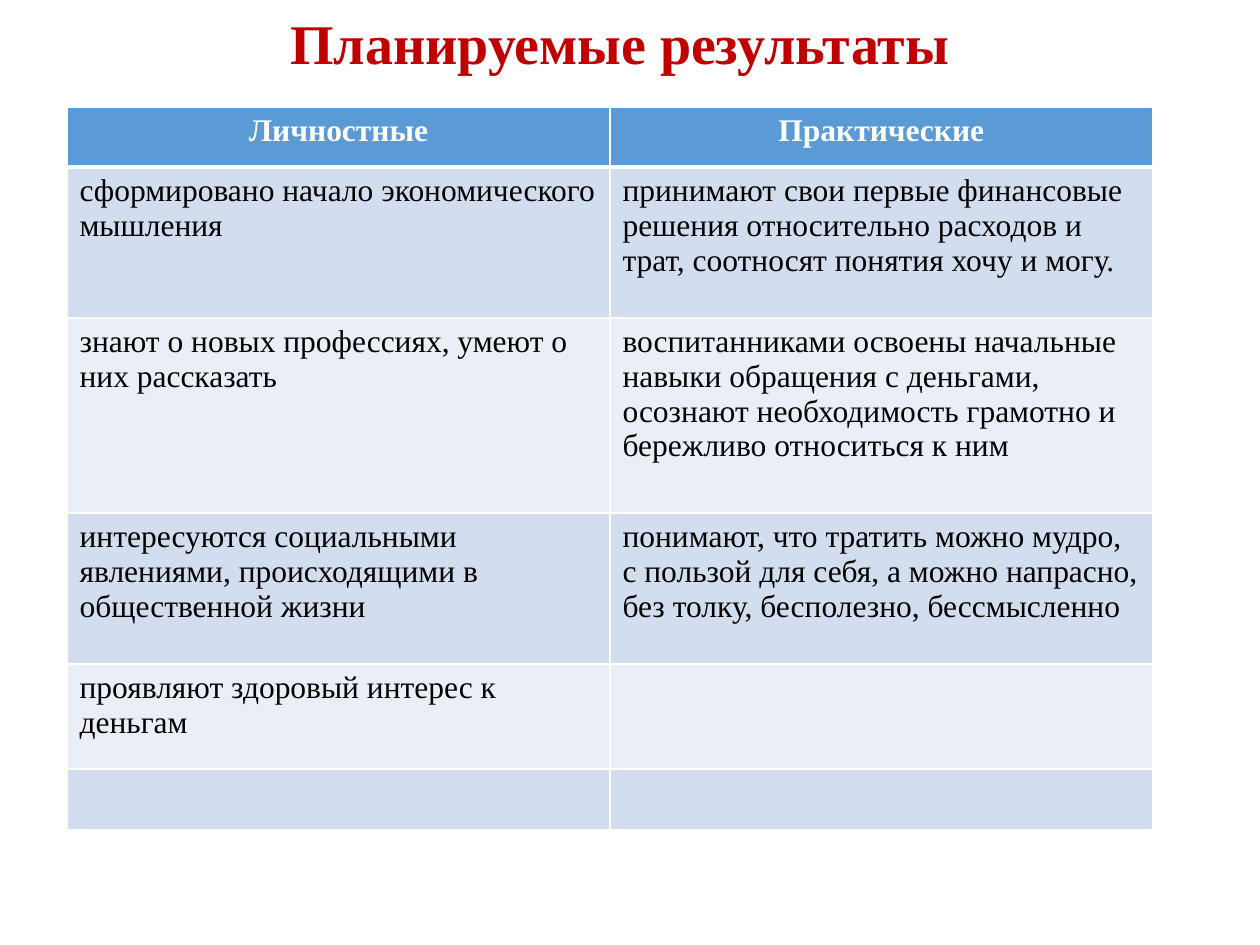
from lxml.etree import SubElement
from pptx import Presentation
from pptx.dml.color import RGBColor
from pptx.enum.text import MSO_ANCHOR, PP_ALIGN
from pptx.oxml.ns import qn
from pptx.util import Pt

PX = 914400 // 126
FONT = "Times New Roman"
COLORS = {
    "title": "C00000", "header": "5B9BD5", "odd": "D2DEEF",
    "even": "EAEFF7", "white": "FFFFFF", "text": "000000",
}
TITLE = "Планируемые результаты"
TITLE_BOX = (77, 0, 1086, 93)
TABLE_LEFT, TABLE_TOP, COLUMN_WIDTH = 67, 107, 543
# Row height in px, then the two cells
ROWS = [
    (60, "Личностные", "Практические"),
    (151, "сформировано начало экономического мышления",
     "принимают свои первые финансовые решения относительно расходов и трат, "
     "соотносят понятия хочу и могу."),
    (195, "знают о новых профессиях, умеют о них рассказать",
     "воспитанниками освоены начальные навыки обращения с деньгами, "
     "осознают необходимость грамотно и бережливо относиться к ним"),
    (151, "интересуются социальными явлениями, происходящими в общественной жизни",
     "понимают, что тратить можно мудро, с пользой для себя, а можно напрасно, "
     "без толку, бесполезно, бессмысленно"),
    (105, "проявляют здоровый интерес к деньгам", ""),
    (61, "", ""),
]


def px(*lengths):
    return [length * PX for length in lengths]


def style(paragraph, size, color, bold):
    for font in [paragraph.font, *(run.font for run in paragraph.runs)]:
        font.name = FONT
        font.size = Pt(size)
        font.bold = bold
        font.color.rgb = RGBColor.from_string(COLORS[color])


def set_borders(cell, top, bottom):
    properties = cell._tc.get_or_add_tcPr()
    for side, width in (("L", 1), ("R", 1), ("T", top), ("B", bottom)):
        line = SubElement(properties, qn(f"a:ln{side}"), w=str(Pt(width)))
        fill = SubElement(line, qn("a:solidFill"))
        SubElement(fill, qn("a:srgbClr"), val=COLORS["white"])


def add_title(slide):
    text_frame = slide.shapes.add_textbox(*px(*TITLE_BOX)).text_frame
    text_frame.word_wrap = True
    text_frame.vertical_anchor = MSO_ANCHOR.MIDDLE
    text_frame.text = TITLE
    paragraph = text_frame.paragraphs[0]
    paragraph.alignment = PP_ALIGN.CENTER
    paragraph.line_spacing = 0.9
    style(paragraph, 32, "title", True)


def add_results_table(slide):
    height = sum(row[0] for row in ROWS)
    table = slide.shapes.add_table(
        len(ROWS), 2, *px(TABLE_LEFT, TABLE_TOP, 2 * COLUMN_WIDTH, height)).table
    for column in table.columns:
        column.width = COLUMN_WIDTH * PX
    for index, (row_height, *texts) in enumerate(ROWS):
        table.rows[index].height = row_height * PX
        is_header = index == 0
        fill = "header" if is_header else ("even", "odd")[index % 2]
        for column, text in enumerate(texts):
            cell = table.cell(index, column)
            set_borders(cell, top=3 if index == 1 else 1, bottom=3 if is_header else 1)
            cell.fill.solid()
            cell.fill.fore_color.rgb = RGBColor.from_string(COLORS[fill])
            cell.text_frame.text = text
            paragraph = cell.text_frame.paragraphs[0]
            paragraph.alignment = PP_ALIGN.CENTER if is_header else PP_ALIGN.LEFT
            style(paragraph, 18, "white" if is_header else "text", is_header)


presentation = Presentation()
presentation.slide_width, presentation.slide_height = px(1260, 945)
slide = presentation.slides.add_slide(presentation.slide_layouts[6])
add_title(slide)
add_results_table(slide)
presentation.save("out.pptx")
